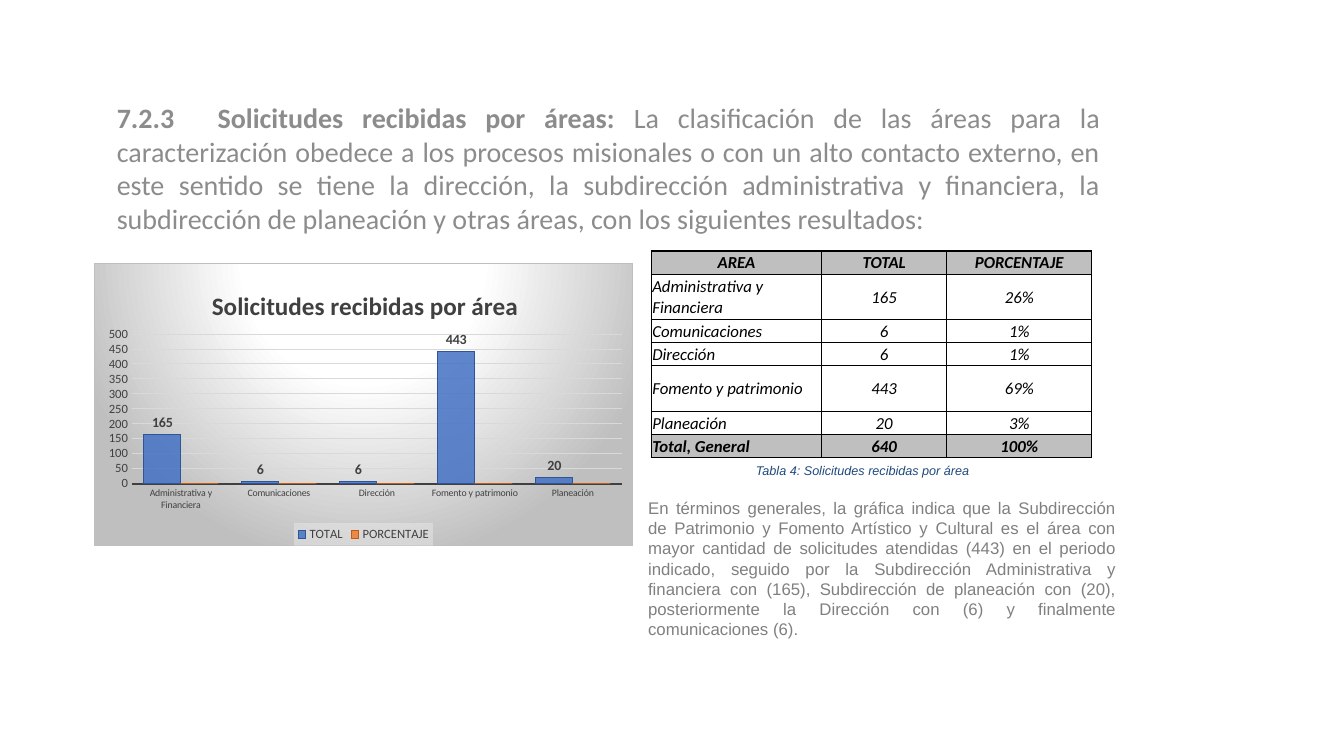
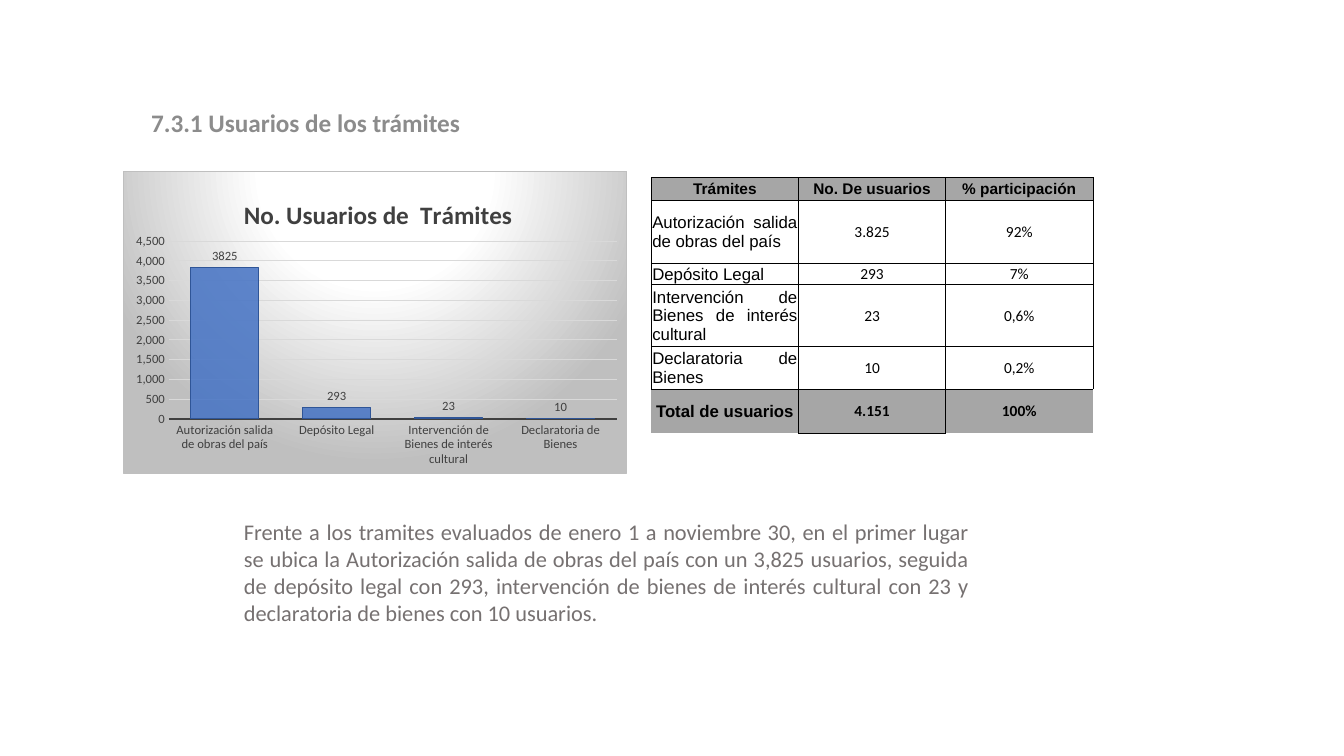
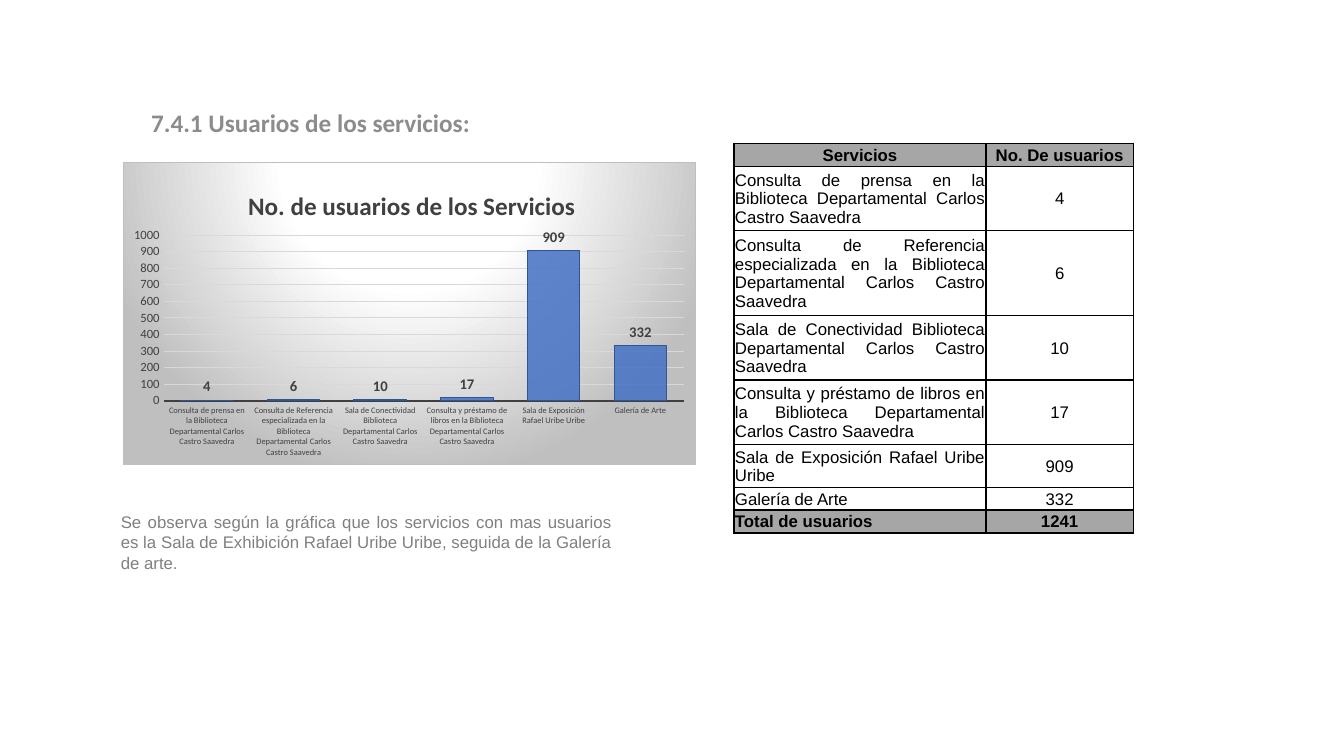
import pptx
import pptx.chart.data
import pptx.dml.color
import pptx.enum.chart
import pptx.enum.text
import pptx.oxml
import pptx.oxml.ns
import pptx.util
import lxml.etree

Inches, Pt, qn = pptx.util.Inches, pptx.util.Pt, pptx.oxml.ns.qn
Align = pptx.enum.text.PP_ALIGN
Kind = pptx.enum.chart
LEFT, MID, JUST = Align.LEFT, Align.CENTER, Align.JUSTIFY

DARK, SILVER, STEEL = "404040", "BFBFBF", "A6A6A6"
BARS = [("4472C4", "2F5597"), ("ED7D31", "C55A11")]  # fill, outline
HEAD = dict(name="Calibri", size=18, bold=True, color="8C8C8C")
LEAD = dict(HEAD, size=20)
BODY = dict(name="Arial", size=12, color="808080")
NOTE = dict(name="Arial", size=9, italic=True, color="1F497D")
AXIS = dict(name="Calibri", size=9, color=DARK)
CELL = dict(name="Calibri", size=12, italic=True, color="000000")
ARIAL = dict(name="Arial", size=12, color="000000")
SMALL = dict(ARIAL, size=11)
COUNT = dict(SMALL, name="Calibri")

LIBRARY = "Biblioteca Departamental Carlos Castro Saavedra"

# A text is (box, alignment, [(words, font), ...]).
# In a table, fonts are those of the header, the first column and the numbers.
SLIDES = [
    dict(
        texts=[
            ((1.06, 0.95, 9.95, 1.78), JUST, [
                ("7.2.3\tSolicitudes recibidas por áreas: ", LEAD),
                ("La clasificación de las áreas para la caracterización obedece a los "
                 "procesos misionales o con un alto contacto externo, en este sentido se "
                 "tiene la dirección, la subdirección administrativa y financiera, la "
                 "subdirección de planeación y otras áreas, con los siguientes resultados:",
                 dict(LEAD, bold=False))]),
            ((6.46, 4.54, 4.19, 0.25), MID,
             [("Tabla 4: Solicitudes recibidas por área", NOTE)]),
            ((6.33, 4.89, 4.84, 1.51), JUST, [
                ("En términos generales, la gráfica indica que la Subdirección de "
                 "Patrimonio y Fomento Artístico y Cultural es el área con mayor cantidad "
                 "de solicitudes atendidas (443) en el periodo indicado, seguido por la "
                 "Subdirección Administrativa y financiera con (165), Subdirección de "
                 "planeación con (20), posteriormente la Dirección con (6) y finalmente "
                 "comunicaciones (6).", BODY)]),
        ],
        chart=dict(
            box=(0.93, 2.61, 5.35, 2.81), title="Solicitudes recibidas por área",
            title_x=0.21, plot=(0.07, 0.25, 0.91, 0.53), top=500, step=50,
            number="General", cat_size=7, label=dict(AXIS, size=10, bold=True),
            cats=["Administrativa y Financiera", "Comunicaciones", "Dirección",
                  "Fomento y patrimonio", "Planeación"],
            series=[("TOTAL", [165, 6, 6, 443, 20]), ("PORCENTAJE", [0] * 5)]),
        table=dict(
            at=(6.46, 2.49), cols=[1.69, 1.24, 1.44], line=1, shade=SILVER,
            heights=[0.23, 0.45, 0.23, 0.23, 0.45, 0.23, 0.23],
            fonts=(CELL, CELL, CELL), align=LEFT, total=LEFT,
            rows=[("AREA", "TOTAL", "PORCENTAJE"),
                  ("Administrativa y Financiera", "165", "26%"),
                  ("Comunicaciones", "6", "1%"),
                  ("Dirección", "6", "1%"),
                  ("Fomento y patrimonio", "443", "69%"),
                  ("Planeación", "20", "3%"),
                  ("Total, General", "640", "100%")]),
    ),
    dict(
        texts=[
            ((1.4, 1.02, 6.67, 0.4), LEFT, [("7.3.1 Usuarios de los trámites", HEAD)]),
            ((2.32, 5.09, 7.39, 1.18), JUST, [
                ("Frente a los tramites evaluados de enero 1 a noviembre 30, en el primer "
                 "lugar se ubica la Autorización salida de obras del país con un 3,825 "
                 "usuarios, seguida de depósito legal con 293, intervención de bienes de "
                 "interés cultural con 23 y declaratoria de bienes con 10 usuarios.",
                 dict(name="Calibri", size=16, color="767171"))]),
        ],
        chart=dict(
            box=(1.22, 1.7, 5, 3), title="No. Usuarios de  Trámites",
            title_x=0.23, plot=(0.09, 0.23, 0.89, 0.59), top=4500, step=500,
            number="#,##0", cat_size=9, label=AXIS,
            cats=["Autorización salida de obras del país", "Depósito Legal",
                  "Intervención de Bienes de interés cultural", "Declaratoria de Bienes"],
            series=[("Series 1", [3825, 293, 23, 10])]),
        table=dict(
            at=(6.46, 1.76), cols=[1.46] * 3, line=0.5, shade=STEEL,
            heights=[0.23, 0.62, 0.21, 0.62, 0.42, 0.44],
            fonts=(SMALL, ARIAL, COUNT), align=JUST, total=MID,
            edges={(5, 0): "RT", (5, 2): "LT"},
            rows=[("Trámites", "No. De usuarios", "% participación"),
                  ("Autorización salida de obras del país", "3.825", "92%"),
                  ("Depósito Legal", "293", "7%"),
                  ("Intervención de Bienes de interés cultural", "23", "0,6%"),
                  ("Declaratoria de Bienes", "10", "0,2%"),
                  ("Total de usuarios", "4.151", "100%")]),
    ),
    dict(
        texts=[
            ((1.1, 5.03, 5.07, 0.91), JUST, [
                ("Se observa según la gráfica que los servicios con mas usuarios es la "
                 "Sala de Exhibición Rafael Uribe Uribe, seguida de la Galería de arte.",
                 BODY)]),
            ((1.4, 1.02, 6.67, 0.4), LEFT, [("7.4.1 Usuarios de los servicios:", HEAD)]),
        ],
        chart=dict(
            box=(1.22, 1.61, 5.68, 3), title="No. de usuarios de los Servicios",
            title_x=0.21, plot=(0.07, 0.24, 0.91, 0.55), top=1000, step=100,
            number="General", cat_size=6, label=dict(AXIS, size=10.5, bold=True),
            cats=["Consulta de prensa en la " + LIBRARY,
                  "Consulta de Referencia especializada en la " + LIBRARY,
                  "Sala de Conectividad " + LIBRARY,
                  "Consulta y préstamo de libros en la " + LIBRARY,
                  "Sala de Exposición Rafael Uribe Uribe", "Galería de Arte"],
            series=[("Series 1", [4, 6, 10, 17, 909, 332])]),
        table=dict(
            at=(7.28, 1.42), cols=[2.5, 1.46], line=1, shade=STEEL,
            heights=[0.23, 0.64, 0.84, 0.64, 0.64, 0.43, 0.22, 0.23],
            fonts=(ARIAL, ARIAL, ARIAL), align=JUST, total=JUST,
            rows=[("Servicios", "No. De usuarios"),
                  ("Consulta de prensa en la " + LIBRARY, "4"),
                  ("Consulta de Referencia especializada en la " + LIBRARY, "6"),
                  ("Sala de Conectividad " + LIBRARY, "10"),
                  ("Consulta y préstamo de libros en la " + LIBRARY, "17"),
                  ("Sala de Exposición Rafael Uribe Uribe", "909"),
                  ("Galería de Arte", "332"),
                  ("Total de usuarios", "1241")]),
    ),
]


def rgb(code):
    return pptx.dml.color.RGBColor.from_string(code)


def style(font, look):
    for key, value in look.items():
        if key == "color":
            font.color.rgb = rgb(value)
        else:
            setattr(font, key, Pt(value) if key == "size" else value)


def stroke(line, color, width):
    line.color.rgb = rgb(color)
    line.width = Pt(width)


def xml(text):
    """Parse an element that uses the a: and c: prefixes."""
    spaces = pptx.oxml.ns.nsdecls("a", "c")
    return pptx.oxml.parse_xml(text.replace(">", f" {spaces}>", 1))


def layout(x, y, w=None, h=None, inner=False):
    """Build a manual chart layout from fractions of the chart size."""
    parts = [("layoutTarget", "inner")] if inner else []
    parts += [("xMode", "edge"), ("yMode", "edge"), ("x", x), ("y", y)]
    if w:
        parts += [("w", w), ("h", h)]
    body = "".join(f'<c:{tag} val="{val}"/>' for tag, val in parts)
    return xml(f"<c:layout><c:manualLayout>{body}</c:manualLayout></c:layout>")


def put_layout(parent, new, after=None):
    """Replace the layout of a chart part, after the named child or first."""
    for old in parent.findall(qn("c:layout")):
        parent.remove(old)
    if after:
        parent.find(qn(after)).addnext(new)
    else:
        parent.insert(0, new)


def add_text(slide, box, align, runs):
    frame = slide.shapes.add_textbox(*map(Inches, box)).text_frame
    frame.word_wrap = True
    para = frame.paragraphs[0]
    para.alignment = align
    for words, look in runs:
        run = para.add_run()
        run.text = words
        style(run.font, look)


def add_backdrop(chart):
    """Give the chart area its radial gradient and thin border."""
    stops = "".join(
        f'<a:gs pos="{at * 1000}"><a:srgbClr val="{color}"/></a:gs>'
        for at, color in [(0, "FFFFFF"), (39, "FFFFFF"), (100, SILVER)])
    chart.element.find(qn("c:chart")).addnext(xml(
        f'<c:spPr><a:gradFill><a:gsLst>{stops}</a:gsLst><a:path path="circle">'
        '<a:fillToRect l="50000" t="-80000" r="50000" b="180000"/></a:path></a:gradFill>'
        f'<a:ln w="{Pt(0.75)}"><a:solidFill><a:srgbClr val="{SILVER}"/></a:solidFill>'
        "</a:ln></c:spPr>"))


def add_legend(chart):
    chart.has_legend = True
    legend = chart.legend
    legend.position = Kind.XL_LEGEND_POSITION.BOTTOM
    legend.include_in_layout = False
    style(legend.font, AXIS)
    chart.element.find(".//" + qn("c:legend")).find(qn("c:txPr")).addprevious(xml(
        '<c:spPr><a:solidFill><a:srgbClr val="F2F2F2"><a:alpha val="39000"/>'
        "</a:srgbClr></a:solidFill></c:spPr>"))


def add_chart(slide, spec):
    data = pptx.chart.data.CategoryChartData()
    data.categories = spec["cats"]
    for name, values in spec["series"]:
        data.add_series(name, values)
    chart = slide.shapes.add_chart(
        Kind.XL_CHART_TYPE.COLUMN_CLUSTERED, *map(Inches, spec["box"]), data).chart
    style(chart.font, dict(name="Calibri", size=10, color="000000"))
    add_backdrop(chart)

    chart.has_title = True
    run = chart.chart_title.text_frame.paragraphs[0].add_run()
    run.text = spec["title"]
    style(run.font, dict(HEAD, color=DARK))
    root = chart.element
    put_layout(root.find(".//" + qn("c:title")), layout(spec["title_x"], 0.07), "c:tx")
    put_layout(root.find(".//" + qn("c:plotArea")), layout(*spec["plot"], inner=True))

    cat, val = chart.category_axis, chart.value_axis
    for axis in (cat, val):
        axis.major_tick_mark = axis.minor_tick_mark = Kind.XL_TICK_MARK.NONE
        style(axis.tick_labels.font, AXIS)
    cat.tick_labels.font.size = Pt(spec["cat_size"])
    stroke(cat.format.line, DARK, 1.5)
    val.format.line.fill.background()
    stroke(val.major_gridlines.format.line, "D9D9D9", 0.75)
    val.minimum_scale, val.maximum_scale = 0, spec["top"]
    val.major_unit = spec["step"]
    val.tick_labels.number_format = spec["number"]
    val.tick_labels.number_format_is_linked = False

    plot = chart.plots[0]
    plot.vary_by_categories = False
    plot.gap_width, plot.overlap = 65, 0
    for bars, (fill, edge) in zip(plot.series, BARS):
        bars.format.fill.solid()
        bars.format.fill.fore_color.rgb = rgb(fill)
        stroke(bars.format.line, edge, 0.75)
    for bars in root.iter(qn("c:ser")):
        color = bars.find(".//" + qn("a:srgbClr"))
        lxml.etree.SubElement(color, qn("a:alpha"), val="85000")
    labels = plot.series[0].data_labels
    labels.show_value = True
    labels.position = Kind.XL_LABEL_POSITION.OUTSIDE_END
    style(labels.font, spec["label"])
    if len(spec["series"]) > 1:
        add_legend(chart)


def border(cell, edges, width):
    """Draw the named edges in black and clear the others."""
    props = cell._tc.get_or_add_tcPr()
    for edge in "LRTB":
        fill = ('<a:solidFill><a:srgbClr val="000000"/></a:solidFill>'
                if edge in edges else "<a:noFill/>")
        props.append(xml(f'<a:ln{edge} w="{Pt(width)}">{fill}</a:ln{edge}>'))


def add_table(slide, spec):
    rows, cols, heights = spec["rows"], spec["cols"], spec["heights"]
    size = (sum(cols), sum(heights))
    table = slide.shapes.add_table(
        len(rows), len(cols), *map(Inches, spec["at"] + size)).table
    table.first_row = table.horz_banding = False
    for col, width in zip(table.columns, cols):
        col.width = Inches(width)
    last = len(rows) - 1
    head, first, number = spec["fonts"]
    for r, row in enumerate(rows):
        table.rows[r].height = Inches(heights[r])
        strong = r in (0, last)
        for c, words in enumerate(row):
            cell = table.cell(r, c)
            cell.margin_left = cell.margin_right = cell.margin_top = Inches(0.01)
            cell.margin_bottom = 0
            cell.vertical_anchor = pptx.enum.text.MSO_ANCHOR.MIDDLE
            border(cell, spec.get("edges", {}).get((r, c), "LRTB"), spec["line"])
            if strong:
                cell.fill.solid()
                cell.fill.fore_color.rgb = rgb(spec["shade"])
            else:
                cell.fill.background()
            para = cell.text_frame.paragraphs[0]
            if r == 0 or c > 0:
                para.alignment = MID
            else:
                para.alignment = spec["total"] if r == last else spec["align"]
            run = para.add_run()
            run.text = words
            look = head if r == 0 else number if c else first
            style(run.font, dict(look, bold=strong))


def main():
    deck = pptx.Presentation()
    deck.slide_width, deck.slide_height = Inches(13.33), Inches(7.5)
    for spec in SLIDES:
        slide = deck.slides.add_slide(deck.slide_layouts[6])
        for text in spec["texts"]:
            add_text(slide, *text)
        add_chart(slide, spec["chart"])
        add_table(slide, spec["table"])
    deck.save("out.pptx")


if __name__ == "__main__":
    main()
